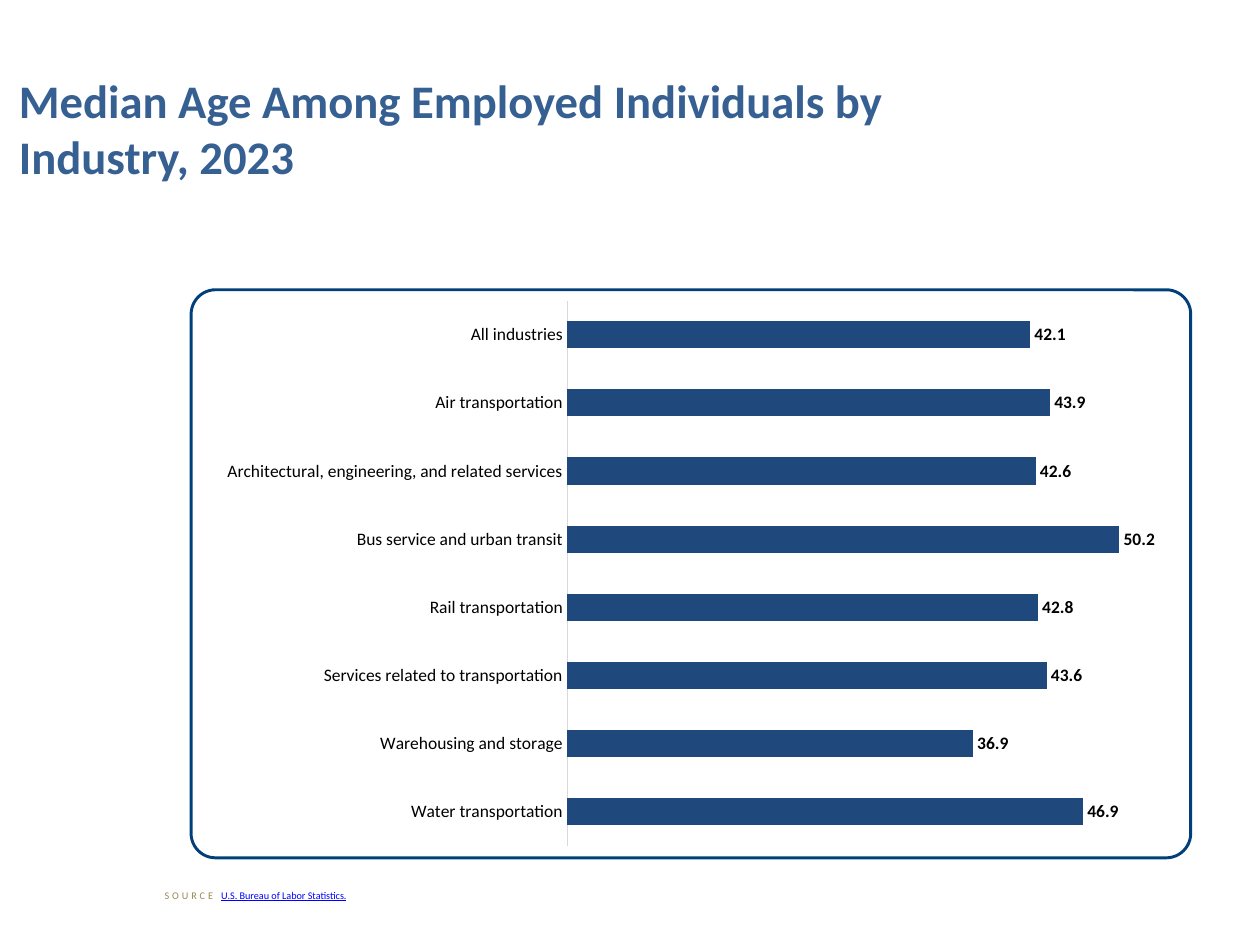
from lxml import etree
from pptx import Presentation
from pptx.chart.data import CategoryChartData
from pptx.dml.color import RGBColor
from pptx.enum import chart as ch, shapes, text
from pptx.oxml.ns import qn
from pptx.util import Inches, Pt

TITLE = "Median Age Among Employed Individuals by Industry, 2023"
MEDIAN_AGES = {
    "All industries": 42.1,
    "Air transportation": 43.9,
    "Architectural, engineering, and related services": 42.6,
    "Bus service and urban transit": 50.2,
    "Rail transportation": 42.8,
    "Services related to transportation": 43.6,
    "Warehousing and storage": 36.9,
    "Water transportation": 46.9,
}
PLOT = {"x": 0.357, "y": 0.019, "w": 0.627, "h": 0.953}
FONT = "Calibri"
TITLE_BLUE = RGBColor(0x37, 0x60, 0x92)
BAR_BLUE = RGBColor(0x1F, 0x49, 0x7D)
FRAME_BLUE = RGBColor(0x00, 0x3F, 0x7A)
LINK_BLUE = RGBColor(0x00, 0x00, 0xFF)
TAN = RGBColor(0x94, 0x8A, 0x54)
GREY = RGBColor(0xD9, 0xD9, 0xD9)
BLACK = RGBColor(0, 0, 0)


def box(*lengths):
    return [Inches(n) for n in lengths]


def set_font(font, size, color, bold=False):
    font.name, font.size, font.bold = FONT, Pt(size), bold
    font.color.rgb = color


def set_plot_layout(chart):
    """Fix the inner plot area as fractions of the chart."""
    area = chart._chartSpace.chart.plotArea
    for old in area.findall(qn("c:layout")):
        area.remove(old)
    layout = etree.Element(qn("c:layout"))
    manual = etree.SubElement(layout, qn("c:manualLayout"))
    settings = {"layoutTarget": "inner", "xMode": "edge", "yMode": "edge", **PLOT}
    for tag, value in settings.items():
        etree.SubElement(manual, qn(f"c:{tag}")).set("val", str(value))
    area.insert(0, layout)


def add_title(slide):
    sp = slide.shapes.title
    sp.left, sp.top, sp.width, sp.height = box(0.08, 0.32, 9, 1.8)
    tf = sp.text_frame
    tf.text = TITLE
    tf.word_wrap = True
    tf.vertical_anchor = text.MSO_ANCHOR.MIDDLE
    p = tf.paragraphs[0]
    p.alignment = text.PP_ALIGN.LEFT
    set_font(p.font, 32, TITLE_BLUE, True)


def add_age_chart(slide):
    data = CategoryChartData(number_format="0.0")
    data.categories = list(MEDIAN_AGES)
    data.add_series("Series 1", list(MEDIAN_AGES.values()))
    chart = slide.shapes.add_chart(
        ch.XL_CHART_TYPE.BAR_CLUSTERED, *box(1.82, 2.76, 10.03, 5.45), data
    ).chart
    chart.has_legend = chart.has_title = False
    set_font(chart.font, 10, BLACK)
    set_plot_layout(chart)

    industries = chart.category_axis
    industries.reverse_order = True
    industries.major_tick_mark = ch.XL_TICK_MARK.NONE
    industries.format.line.color.rgb = GREY
    industries.format.line.width = Pt(0.75)
    set_font(industries.tick_labels.font, 12, BLACK)

    ages = chart.value_axis
    ages.minimum_scale, ages.maximum_scale = 0, 60
    ages.has_major_gridlines = False
    ages.visible = False

    plot = chart.plots[0]
    plot.gap_width = 150
    plot.vary_by_categories = False
    fill = plot.series[0].format.fill
    fill.solid()
    fill.fore_color.rgb = BAR_BLUE
    labels = plot.series[0].data_labels
    labels.show_value = True
    labels.position = ch.XL_LABEL_POSITION.OUTSIDE_END
    set_font(labels.font, 12, BLACK, True)


def add_frame(slide):
    sp = slide.shapes.add_shape(
        shapes.MSO_SHAPE.ROUNDED_RECTANGLE, *box(1.82, 2.76, 9.52, 5.41)
    )
    sp.adjustments[0] = 0.043
    sp.shadow.inherit = False
    sp.fill.background()
    sp.line.color.rgb = FRAME_BLUE
    sp.line.width = Pt(2)


def add_source(slide):
    tf = slide.shapes.add_textbox(*box(1.47, 8.42, 8.39, 0.22)).text_frame
    tf.word_wrap = True
    tf.auto_size = text.MSO_AUTO_SIZE.SHAPE_TO_FIT_TEXT
    p = tf.paragraphs[0]
    r = p.add_run()
    r.text = "SOURCE "
    set_font(r.font, 7, TAN)
    r.font._element.set("spc", "200")
    r = p.add_run()
    r.text = "U.S. Bureau of Labor Statistics."
    set_font(r.font, 7, LINK_BLUE)
    r.font.underline = True


def main():
    prs = Presentation()
    prs.slide_width, prs.slide_height = box(12, 9)
    slide = prs.slides.add_slide(prs.slide_layouts[5])
    add_title(slide)
    add_age_chart(slide)
    add_frame(slide)
    add_source(slide)
    prs.save("out.pptx")


if __name__ == "__main__":
    main()
